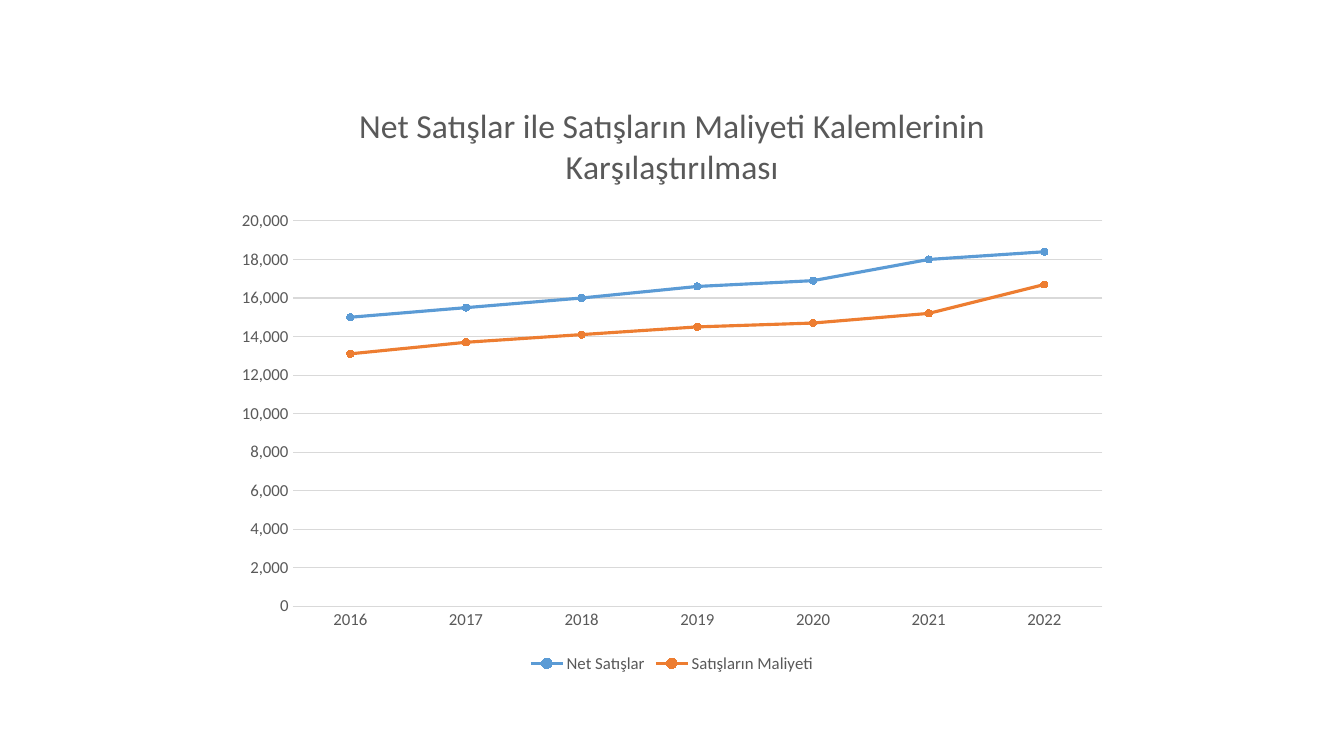
import pptx
import pptx.chart.data
import pptx.dml.color
import pptx.enum.chart
import pptx.util

COLORS = {"text": "595959", "grid": "D9D9D9", "sales": "5B9BD5", "cost": "ED7D31"}
FONT = "Calibri"
TITLE = "Net Satışlar ile Satışların Maliyeti Kalemlerinin Karşılaştırılması"
YEARS = [str(year) for year in range(2016, 2023)]
SERIES = [
    ("Net Satışlar", "sales", [15000, 15500, 16000, 16600, 16900, 18000, 18400]),
    ("Satışların Maliyeti", "cost", [13100, 13700, 14100, 14500, 14700, 15200, 16700]),
]


def rgb(color):
    return pptx.dml.color.RGBColor.from_string(COLORS[color])


def format_font(font, size=12, color="text", bold=False):
    font.name = FONT
    font.size = pptx.util.Pt(size)
    font.bold = bold
    font.color.rgb = rgb(color)


def write_text(text_frame, text, **text_format):
    run = text_frame.paragraphs[0].add_run()
    run.text = text
    format_font(run.font, **text_format)


def format_line(line, color, width):
    line.color.rgb = rgb(color)
    line.width = pptx.util.Pt(width)


def format_axis(axis):
    axis.major_tick_mark = pptx.enum.chart.XL_TICK_MARK.NONE
    axis.minor_tick_mark = pptx.enum.chart.XL_TICK_MARK.NONE
    format_font(axis.tick_labels.font)


def format_series(series, color):
    series.smooth = False
    format_line(series.format.line, color, 2.25)
    marker = series.marker
    marker.style = pptx.enum.chart.XL_MARKER_STYLE.CIRCLE
    marker.size = 5
    marker.format.fill.solid()
    marker.format.fill.fore_color.rgb = rgb(color)
    format_line(marker.format.line, color, 0.75)


def add_line_chart(slide, left, top, width, height):
    chart_data = pptx.chart.data.CategoryChartData(number_format="#,##0")
    chart_data.categories = YEARS
    for name, _, values in SERIES:
        chart_data.add_series(name, values)
    chart = slide.shapes.add_chart(
        pptx.enum.chart.XL_CHART_TYPE.LINE_MARKERS,
        *map(pptx.util.Inches, (left, top, width, height)),
        chart_data,
    ).chart
    format_font(chart.font)
    chart.plots[0].vary_by_categories = False
    for series, (_, color, _) in zip(chart.plots[0].series, SERIES):
        format_series(series, color)
    return chart


def format_axes(chart):
    format_axis(chart.category_axis)
    format_line(chart.category_axis.format.line, "grid", 0.75)
    value_axis = chart.value_axis
    format_axis(value_axis)
    value_axis.minimum_scale = 0
    value_axis.maximum_scale = 20000
    value_axis.major_unit = 2000
    value_axis.format.line.fill.background()
    format_line(value_axis.major_gridlines.format.line, "grid", 0.75)
    value_axis.tick_labels.number_format = "#,##0"
    value_axis.tick_labels.number_format_is_linked = False


def format_legend(chart):
    chart.has_legend = True
    chart.legend.position = pptx.enum.chart.XL_LEGEND_POSITION.BOTTOM
    chart.legend.include_in_layout = False
    format_font(chart.legend.font)


def main():
    presentation = pptx.Presentation()
    presentation.slide_width = pptx.util.Inches(13.33)
    presentation.slide_height = pptx.util.Inches(7.5)
    slide = presentation.slides.add_slide(presentation.slide_layouts[6])
    chart = add_line_chart(slide, 2.22, 0.79, 8.89, 5.93)
    chart.has_title = True
    write_text(chart.chart_title.text_frame, TITLE, size=24)
    chart.chart_title.include_in_layout = False
    format_axes(chart)
    format_legend(chart)
    presentation.save("out.pptx")


if __name__ == "__main__":
    main()
